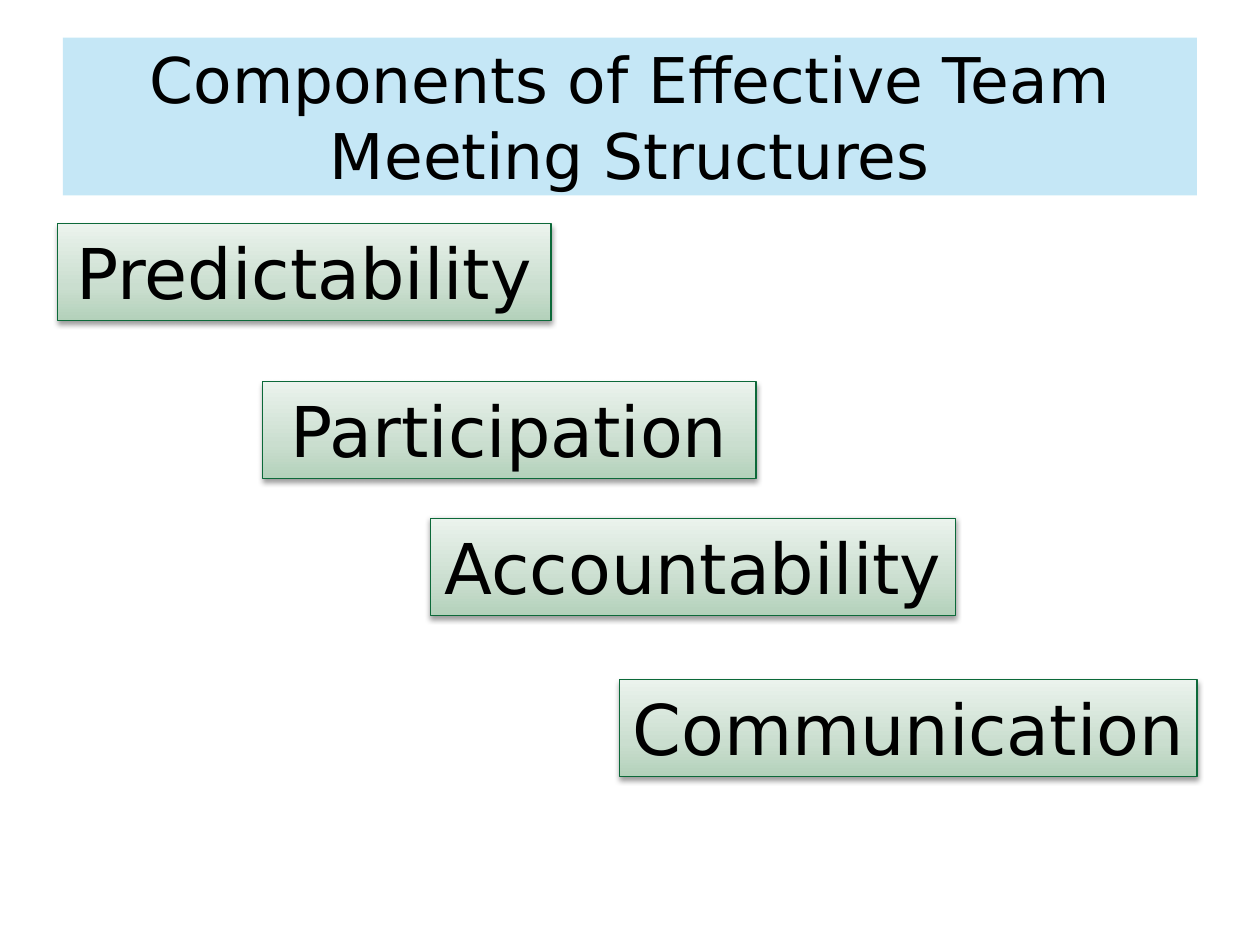
import copy
import dataclasses

import lxml.etree
import pptx
import pptx.dml.color
import pptx.enum.shapes
import pptx.enum.text
import pptx.oxml.ns
import pptx.shapes.autoshape
import pptx.slide
import pptx.util

FONT = "DejaVu Sans"
COLOURS = {
    "text": "000000",
    "banner": "AADDF3",
    "border": "0C6939",
    "shadow": "000000",
    "deep green": "B3D1BA",
    "mid green": "CADECF",
    "pale green": "EBF3ED",
}
GREEN_STOPS = ((0, "deep green"), (0.35, "mid green"), (1, "pale green"))
COMPONENT_HEIGHT = 1.96


@dataclasses.dataclass
class Component:
    """One step of the staircase; lengths in centimetres."""
    label: str
    left: float
    top: float
    width: float


COMPONENTS = (
    Component("Predictability", 1.16, 4.51, 9.95),
    Component("Participation", 5.29, 7.69, 9.95),
    Component("Accountability", 8.68, 10.45, 10.59),
    Component("Communication", 12.49, 13.7, 11.64),
)


def colour(name: str) -> pptx.dml.color.RGBColor:
    return pptx.dml.color.RGBColor.from_string(COLOURS[name])


def add_sub(parent, tag: str, **attributes: str):
    return lxml.etree.SubElement(parent, pptx.oxml.ns.qn(tag), attributes)


def add_box(slide: pptx.slide.Slide, left: float, top: float, width: float,
            height: float) -> pptx.shapes.autoshape.Shape:
    box = slide.shapes.add_shape(
        pptx.enum.shapes.MSO_SHAPE.RECTANGLE,
        *(pptx.util.Cm(length) for length in (left, top, width, height)))
    box.shadow.inherit = False
    return box


def write_text(box: pptx.shapes.autoshape.Shape, text: str, *, size: float,
               anchor: pptx.enum.text.MSO_ANCHOR, side_margin: float = 0.25) -> None:
    frame = box.text_frame
    frame.word_wrap = True
    frame.vertical_anchor = anchor
    frame.margin_left = frame.margin_right = pptx.util.Cm(side_margin)
    paragraph = frame.paragraphs[0]
    paragraph.alignment = pptx.enum.text.PP_ALIGN.CENTER
    run = paragraph.add_run()
    run.text = text
    run.font.name = FONT
    run.font.size = pptx.util.Pt(size)
    run.font.color.rgb = colour("text")


def fill_green(box: pptx.shapes.autoshape.Shape) -> None:
    """Three-stop gradient, darkest at the bottom."""
    box.fill.gradient()
    box.fill.gradient_angle = 90
    stop_list = box._element.spPr.find(".//" + pptx.oxml.ns.qn("a:gsLst"))
    stop_list.insert(1, copy.deepcopy(stop_list[0]))
    for stop, (position, name) in zip(box.fill.gradient_stops, GREEN_STOPS):
        stop.position = position
        stop.color.rgb = colour(name)


def drop_shadow(box: pptx.shapes.autoshape.Shape) -> None:
    effects = box._element.spPr.find(pptx.oxml.ns.qn("a:effectLst"))
    shadow = add_sub(effects, "a:outerShdw", blurRad="40000", dist="20000",
                     dir="5400000", rotWithShape="0")
    tint = add_sub(shadow, "a:srgbClr", val=COLOURS["shadow"])
    add_sub(tint, "a:alpha", val="38000")


def add_banner(slide: pptx.slide.Slide, title: str) -> None:
    banner = add_box(slide, 1.27, 0.76, 22.86, 3.18)
    banner.fill.solid()
    banner.fill.fore_color.rgb = colour("banner")
    tint = banner._element.spPr.find(".//" + pptx.oxml.ns.qn("a:srgbClr"))
    add_sub(tint, "a:alpha", val="68000")
    banner.line.fill.background()
    write_text(banner, title, size=36, anchor=pptx.enum.text.MSO_ANCHOR.MIDDLE)


def add_component(slide: pptx.slide.Slide, component: Component) -> None:
    box = add_box(slide, component.left, component.top, component.width,
                  COMPONENT_HEIGHT)
    fill_green(box)
    box.line.color.rgb = colour("border")
    box.line.width = pptx.util.Pt(0.75)
    drop_shadow(box)
    write_text(box, component.label, size=40, side_margin=0.1,
               anchor=pptx.enum.text.MSO_ANCHOR.TOP)


def main() -> None:
    deck = pptx.Presentation()
    deck.slide_width = pptx.util.Cm(25.4)
    deck.slide_height = pptx.util.Cm(19.05)
    slide = deck.slides.add_slide(deck.slide_layouts[6])
    add_banner(slide, "Components of Effective Team Meeting Structures")
    for component in COMPONENTS:
        add_component(slide, component)
    deck.save("out.pptx")


if __name__ == "__main__":
    main()
